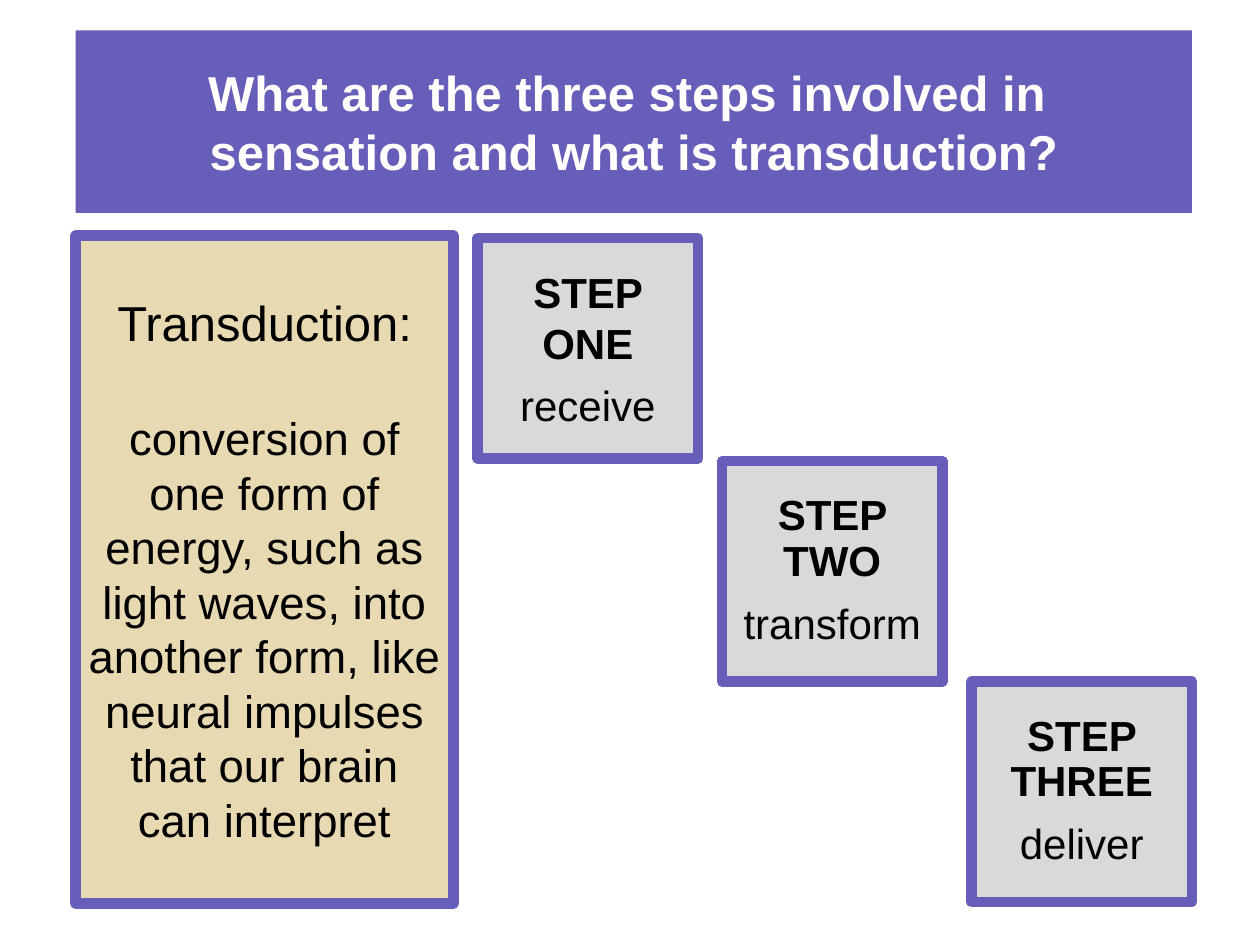
from pptx import Presentation, util as u
from pptx.dml.color import RGBColor
from pptx.enum import shapes, text

PURPLE, SAND, GREY = "665EB8", "E7D9B1", "D9D9D9"
BLACK, WHITE = "000000", "FFFFFF"


def tint(code):
    return RGBColor.from_string(code)


class Deck:
    font = "Arial"
    edge = 6

    def __init__(self, wide, high):
        self.prs = Presentation()
        self.prs.slide_width = u.Inches(wide)
        self.prs.slide_height = u.Inches(high)
        self.slide = self.prs.slides.add_slide(self.prs.slide_layouts[6])

    def box(self, left, top, wide, high, fill, line=None):
        """Add a filled rectangle and return its text frame."""
        rect = self.slide.shapes.add_shape(
            shapes.MSO_SHAPE.RECTANGLE,
            *map(u.Inches, (left, top, wide, high)))
        rect.shadow.inherit = False
        rect.fill.solid()
        rect.fill.fore_color.rgb = tint(fill)
        if line:
            rect.line.color.rgb = tint(line)
            rect.line.width = u.Pt(self.edge)
        else:
            rect.line.fill.background()
        frame = rect.text_frame
        frame.word_wrap = True
        frame.vertical_anchor = text.MSO_ANCHOR.MIDDLE
        return frame

    def para(self, frame, lines, size, color=BLACK, bold=False,
             before=0, pitch=None):
        """Fill the first paragraph if it is empty, else add one."""
        par = frame.paragraphs[0]
        if par.runs:
            par = frame.add_paragraph()
        par.alignment = text.PP_ALIGN.CENTER
        par.space_before = u.Pt(before)
        if pitch:
            par.line_spacing = pitch
        for i, line in enumerate(lines):
            if i:
                par.add_line_break()
            run = par.add_run()
            run.text = line
            run.font.name = self.font
            run.font.size = u.Pt(size)
            run.font.bold = bold
            run.font.color.rgb = tint(color)

    def step(self, left, top, name, verb, **gap):
        frame = self.box(left, top, 1.75, 1.75, GREY, PURPLE)
        self.para(frame, [name], 24, bold=True, **gap)
        self.para(frame, [verb], 24, before=10, pitch=0.9)


def main():
    deck = Deck(10, 7.5)

    # Title band
    title = deck.box(0.6, 0.24, 8.86, 1.45, PURPLE)
    deck.para(title, ["What are the three steps involved in ",
                      "sensation and what is transduction?"],
              28, WHITE, bold=True)

    # Definition panel
    panel = deck.box(0.6, 1.87, 3, 5.3, SAND, PURPLE)
    deck.para(panel, ["Transduction:"], 28)
    deck.para(panel, ["conversion of one form of energy, such as light "
                      "waves, into another form, like neural impulses "
                      "that our brain can interpret"], 26, before=33.5)

    # Staircase of steps
    tight = {"before": 10, "pitch": 0.9}
    deck.step(3.79, 1.89, "STEP ONE", "receive")
    deck.step(5.73, 3.66, "STEP TWO", "transform", **tight)
    deck.step(7.71, 5.41, "STEP THREE", "deliver", **tight)

    deck.prs.save("out.pptx")


if __name__ == "__main__":
    main()
